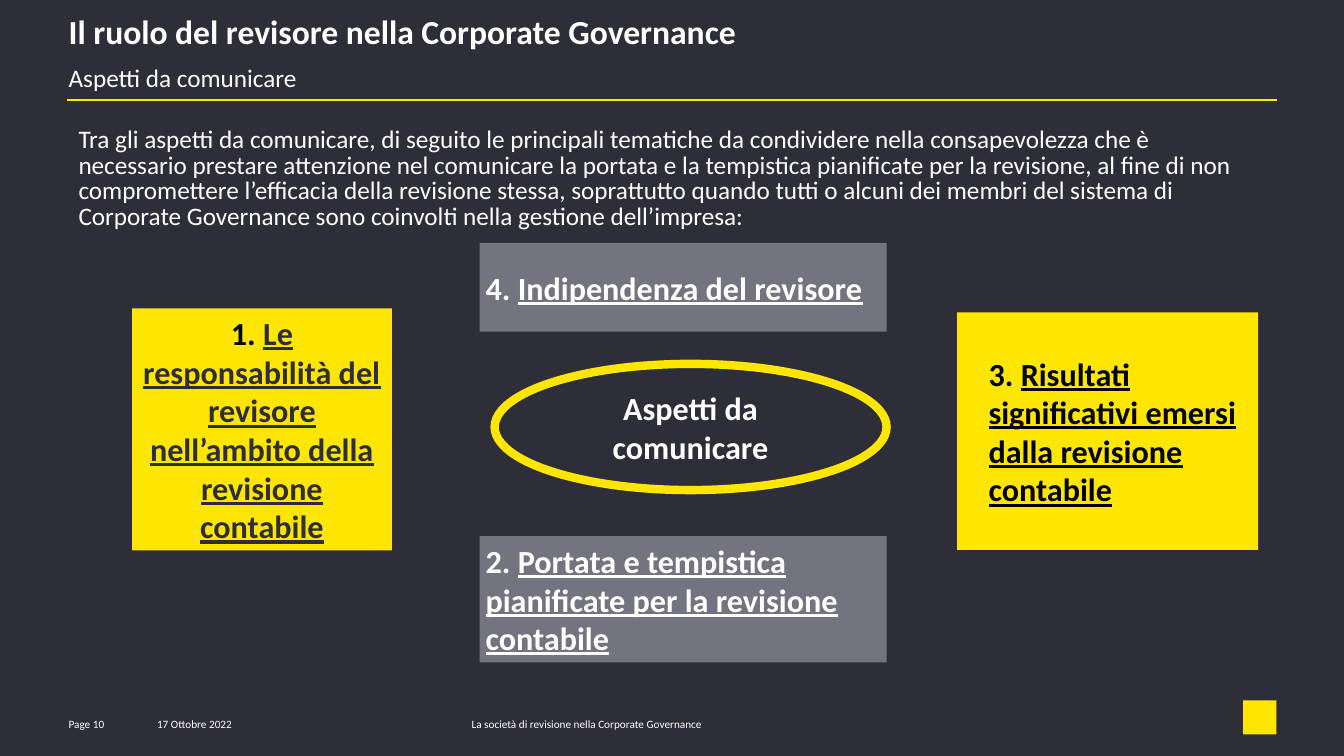
"""Build the slide on what the auditor must communicate in corporate governance."""
import pptx
import pptx.dml.color
import pptx.enum.shapes
import pptx.enum.text
import pptx.oxml.ns
import pptx.util
from lxml import etree

Cm = pptx.util.Cm
Pt = pptx.util.Pt
RGBColor = pptx.dml.color.RGBColor
Shape = pptx.enum.shapes.MSO_SHAPE
Align = pptx.enum.text.PP_ALIGN
Anchor = pptx.enum.text.MSO_ANCHOR

DARK = RGBColor(0x2E, 0x2E, 0x38)
YELLOW = RGBColor(0xFF, 0xE6, 0x00)
GREY = RGBColor(0x74, 0x74, 0x80)
WHITE = RGBColor(0xFF, 0xFF, 0xFF)
BLACK = RGBColor(0x00, 0x00, 0x00)


def add_run(paragraph, text, *, size=18, color=WHITE, bold=False, underline=False):
    run = paragraph.add_run()
    run.text = text
    font = run.font
    font.name = "Calibri"
    font.size = Pt(size)
    font.color.rgb = color
    font.bold = bold
    font.underline = underline


class SlideBuilder:
    def __init__(self, slide):
        self.slide = slide
        self.shapes = slide.shapes
        slide.background.fill.solid()
        slide.background.fill.fore_color.rgb = DARK

    def frame(self, shape, margins, anchor, align=Align.LEFT):
        frame = shape.text_frame
        frame.word_wrap = True
        frame.auto_size = pptx.enum.text.MSO_AUTO_SIZE.NONE
        frame.vertical_anchor = anchor
        (frame.margin_left, frame.margin_top,
         frame.margin_right, frame.margin_bottom) = [Cm(margin) for margin in margins]
        paragraph = frame.paragraphs[0]
        paragraph.alignment = align
        return paragraph

    def title(self, text, left, top, width, height):
        shape = self.shapes.title
        shape.left, shape.top, shape.width, shape.height = map(Cm, (left, top, width, height))
        paragraph = self.frame(shape, (0, 0, 0, 0), Anchor.TOP)
        paragraph.line_spacing = 0.85
        add_run(paragraph, text)

    def text(self, text, left, top, width, height, **style):
        shape = self.shapes.add_textbox(Cm(left), Cm(top), Cm(width), Cm(height))
        paragraph = self.frame(shape, (0, 0.1, 0, 0), Anchor.TOP)
        paragraph.line_spacing = 0.85
        paragraph.space_after = Pt(6)
        add_run(paragraph, text, **style)

    def footer(self, text, left, width):
        shape = self.shapes.add_textbox(Cm(left), Cm(17.98), Cm(width), Cm(0.51))
        add_run(self.frame(shape, (0, 0, 0, 0), Anchor.MIDDLE), text, size=8)

    def shape(self, kind, left, top, width, height, fill=None, line=None):
        shape = self.shapes.add_shape(kind, Cm(left), Cm(top), Cm(width), Cm(height))
        shape.shadow.inherit = False
        if fill is None:
            shape.fill.background()
        else:
            shape.fill.solid()
            shape.fill.fore_color.rgb = fill
        if line is None:
            shape.line.fill.background()
        else:
            shape.line.color.rgb = line
            shape.line.width = Pt(6)
        return shape

    def topic(self, number, text, left, top, width, height, *, fill, color,
              text_color=None, align=Align.LEFT, inset=0.15):
        shape = self.shape(Shape.RECTANGLE, left, top, width, height, fill=fill)
        paragraph = self.frame(shape, (inset, 0.15, 0.15, 0.15), Anchor.MIDDLE, align)
        add_run(paragraph, f"{number}. ", size=23, color=color, bold=True)
        add_run(paragraph, text, size=23, color=text_color or color, bold=True, underline=True)

    def hub(self, text, left, top, width, height):
        shape = self.shape(Shape.OVAL, left, top, width, height, line=YELLOW)
        paragraph = self.frame(shape, (0.25, 0.13, 0.25, 0.13), Anchor.MIDDLE, Align.CENTER)
        add_run(paragraph, text, size=23, bold=True)

    def rule(self, left, right, top):
        connector = self.shapes.add_connector(
            pptx.enum.shapes.MSO_CONNECTOR.STRAIGHT, Cm(left), Cm(top), Cm(right), Cm(top))
        connector.line.color.rgb = YELLOW
        connector.line.width = Pt(1.5)
        properties = connector._element.spPr
        etree.SubElement(properties, pptx.oxml.ns.qn("a:effectLst"))


def main():
    presentation = pptx.Presentation()
    presentation.slide_width = Cm(33.88)
    presentation.slide_height = Cm(19.05)
    builder = SlideBuilder(presentation.slides.add_slide(presentation.slide_layouts[5]))

    builder.shape(Shape.RECTANGLE, 31.34, 17.65, 0.84, 0.86, fill=YELLOW)
    builder.rule(1.7, 32.18, 2.51)
    builder.title("Aspetti da comunicare", 1.73, 1.68, 30.5, 0.94)
    builder.text("Il ruolo del revisore nella Corporate Governance",
                 1.73, 0.33, 21.59, 0.97, size=24, bold=True)
    builder.text(
        "Tra gli aspetti da comunicare, di seguito le principali tematiche da condividere "
        "nella consapevolezza che è necessario prestare attenzione nel comunicare la portata "
        "e la tempistica pianificate per la revisione, al fine di non compromettere "
        "l’efficacia della revisione stessa, soprattutto quando tutti o alcuni dei membri "
        "del sistema di Corporate Governance sono coinvolti nella gestione dell’impresa:",
        1.98, 3.12, 29.85, 2.72)

    builder.topic(1, "Le responsabilità del revisore nell’ambito della revisione contabile",
                  3.33, 7.77, 6.55, 6.1, fill=YELLOW, color=BLACK, text_color=DARK,
                  align=Align.CENTER)
    builder.topic(2, "Portata e tempistica pianificate per la revisione contabile",
                  12.09, 13.51, 10.26, 3.18, fill=GREY, color=WHITE)
    builder.topic(3, "Risultati significativi emersi dalla revisione contabile",
                  24.13, 7.87, 7.59, 5.99, fill=YELLOW, color=BLACK, inset=0.79)
    builder.topic(4, "Indipendenza del revisore",
                  12.09, 6.12, 10.26, 2.24, fill=GREY, color=WHITE)
    builder.hub("Aspetti da comunicare", 12.47, 9.17, 9.88, 3.18)

    builder.footer("Page 10", 1.73, 1.85)
    builder.footer("17 Ottobre 2022", 3.96, 3.3)
    builder.footer("La società di revisione nella Corporate Governance", 11.89, 8.59)
    presentation.save("out.pptx")


if __name__ == "__main__":
    main()
